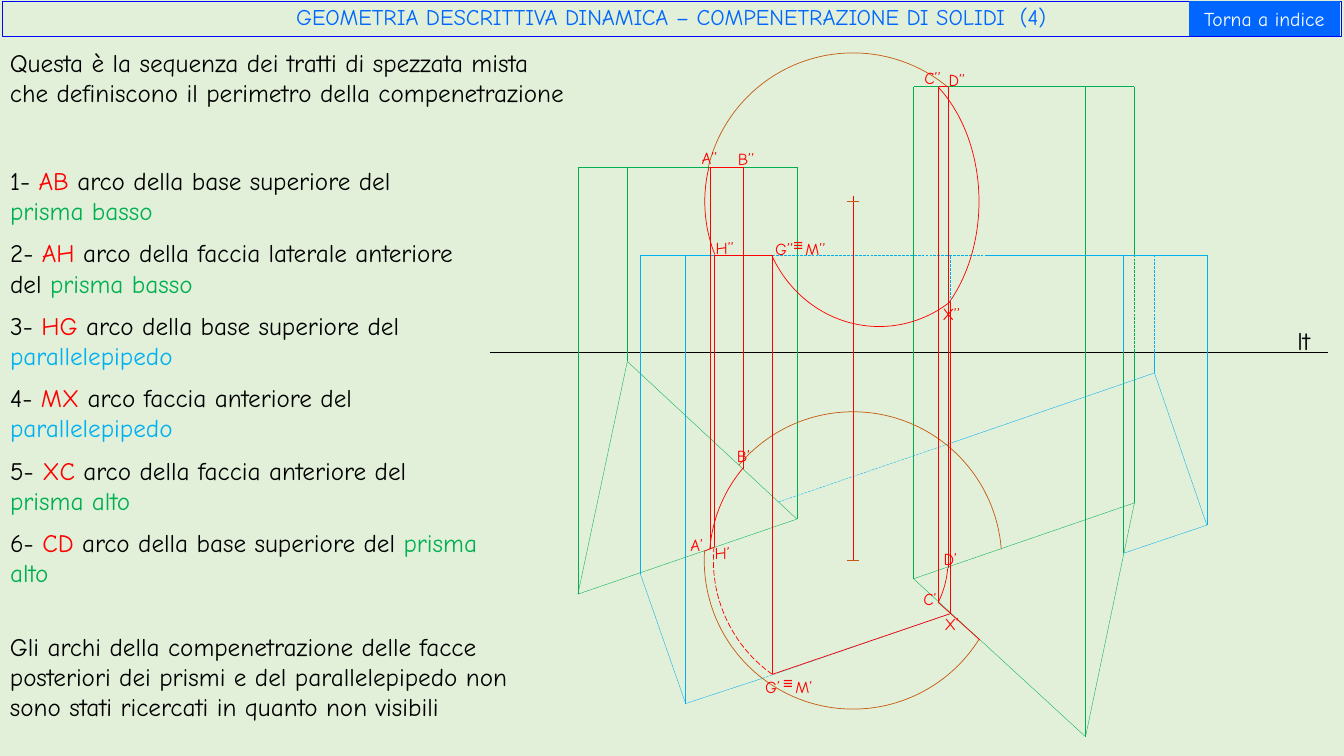
from math import atan2, cos, degrees, hypot, radians, sin

from pptx import Presentation
from pptx.dml.color import RGBColor
from pptx.enum.dml import MSO_LINE
from pptx.enum.shapes import MSO_CONNECTOR, MSO_SHAPE
from pptx.enum.text import MSO_ANCHOR, MSO_AUTO_SIZE, PP_ALIGN
from pptx.oxml.ns import qn
from pptx.util import Inches, Pt

STRAIGHT, LONG_DASH = MSO_CONNECTOR.STRAIGHT, MSO_LINE.LONG_DASH
ARC, TRIANGLE = MSO_SHAPE.ARC, MSO_SHAPE.ISOSCELES_TRIANGLE
BUTTON = MSO_SHAPE.ACTION_BUTTON_CUSTOM
TOP, MIDDLE = MSO_ANCHOR.TOP, MSO_ANCHOR.MIDDLE
LEFT, CENTER = PP_ALIGN.LEFT, PP_ALIGN.CENTER
NO_FIT = MSO_AUTO_SIZE.NONE

COLORS = {
    "background": "E2F0D9", "black": "000000", "white": "FFFFFF",
    "frame": "0000FF", "title": "0066FF", "red": "FF0000",
    "green": "00B050", "blue": "00B0F0", "orange": "C55A11",
}
FONT = "Comic Neue"

TITLE = "GEOMETRIA DESCRITTIVA DINAMICA – COMPENETRAZIONE DI SOLIDI  (4)"
BACK_TO_INDEX = "Torna a indice"
INTRO = ("Questa è la sequenza dei tratti di spezzata mista che definiscono "
         "il perimetro della compenetrazione")
CLOSING = ("Gli archi della compenetrazione delle facce posteriori dei prismi e "
           "del parallelepipedo non sono stati ricercati in quanto non visibili")
# edge, description, solid, colour of the solid
STEPS = [
    ("AB", "arco della base superiore del\v", "prisma basso", "green"),
    ("AH", "arco della faccia laterale anteriore del ", "prisma basso", "green"),
    ("HG", "arco della base superiore del ", "parallelepipedo", "blue"),
    ("MX", "arco faccia anteriore del ", "parallelepipedo", "blue"),
    ("XC", "arco della faccia anteriore del ", "prisma alto", "green"),
    ("CD", "arco della base superiore del ", "prisma alto", "green"),
]

# The plan lies below the ground line, the elevation above it.
GROUND = 3.49
LOW_TOP, TALL_TOP, BLOCK_TOP = 1.66, 0.86, 2.53
# Triangular bases in plan: box before rotation, rotation
LOW_BASE = (5.76, 3.96, 2.36, 1.97), 102
TALL_BASE = (8.85, 4.95, 2.37, 1.99), 281.8
BLOCK = {"west": (6.35, 5.69), "south": (6.8, 6.98),
         "east": (11.97, 5.21), "north": (11.45, 3.7)}
BLOCK_MEETS_TALL = (11.14, 5.49)

SPHERE_X, SPHERE_PLAN_Y, SPHERE_ELEVATION_Y = 8.46, 5.56, 2.0
SPHERE_RADIUS, CENTER_MARK = 1.475, 0.06
SPHERE_MEETS_LOW = (6.98, 5.47)
SPHERE_MEETS_TALL_FRONT, SPHERE_MEETS_TALL_BACK = (9.72, 6.35), (9.93, 5.45)

# Points of the section: x, y in plan, y in elevation
SECTION = {
    "A": (7.04, 5.45, LOW_TOP), "B": (7.37, 4.65, LOW_TOP),
    "C": (9.31, 5.98, TALL_TOP), "D": (9.4, 5.64, TALL_TOP),
    "H": (7.08, 5.43, BLOCK_TOP), "G": (7.66, 6.69, BLOCK_TOP),
    "X": (9.42, 6.09, 3.0),
}
PLAN = {name: (x, y) for name, (x, y, _) in SECTION.items()}
ELEVATION = {name: (x, y) for name, (x, _, y) in SECTION.items()}
# Shift of each label from its point, in plan and in elevation
LABEL_SHIFTS = {
    "A": ((-0.29, -0.19), (-0.18, -0.24)), "B": ((-0.16, -0.28), (-0.15, -0.23)),
    "C": ((-0.25, -0.19), (-0.24, -0.24)), "D": ((-0.14, -0.25), (-0.09, -0.22)),
    "H": ((-0.09, -0.09), (-0.08, -0.22)), "G": ((-0.17, -0.03), (-0.07, -0.21)),
    "X": ((-0.15, -0.05), (-0.17, -0.04)),
}
# Ellipses of the section in elevation: clockwise ends, centre x, radii
ELLIPSES = [("XG", 8.72, (1.18, 1.24)), ("CX", 8.64, (1.07, 1.45)),
            ("HA", 8.28, (1.29, 1.36))]


def rgb(name):
    return RGBColor.from_string(COLORS[name])


def inches(values):
    return [Inches(v) for v in values]


def set_line(line, color, width, dashed=False):
    line.color.rgb = rgb(color)
    line.width = Pt(width)
    if dashed:
        line.dash_style = LONG_DASH


def write(p, runs, size, align=LEFT, font=FONT):
    """Fill a paragraph with (text, colour) runs; \\v breaks the line."""
    p.alignment = align
    for text, color in runs:
        for i, part in enumerate(text.split("\v")):
            if i:
                p.add_line_break()
            if part:
                r = p.add_run()
                r.text = part
                for name, value in {"name": font, "size": Pt(size), "bold": False}.items():
                    setattr(r.font, name, value)
                r.font.color.rgb = rgb(color)


def set_frame(sp, anchor, box):
    for name, value in zip(("left", "top", "width", "height"), inches(box)):
        setattr(sp, name, value)
    tf = sp.text_frame
    for name, value in {"word_wrap": True, "auto_size": NO_FIT,
                        "vertical_anchor": anchor}.items():
        setattr(tf, name, value)
    return tf


def add_text(shapes, text, box, size=18, color="black", font=FONT):
    tf = set_frame(shapes.add_textbox(0, 0, 0, 0), TOP, box)
    write(tf.paragraphs[0], [(text, color)], size, font=font)


def add_line(shapes, color, start, end, dashed=False, width=0.25):
    line = shapes.add_connector(STRAIGHT, *inches((*start, *end)))
    set_line(line.line, color, width, dashed)
    spPr = line._element.spPr
    spPr.append(spPr.makeelement(qn("a:effectLst"), {}))


def add_edge(shapes, color, foot, top, hidden_to=None):
    """Draw a vertical edge up from its foot, dashed from BLOCK_TOP to hidden_to."""
    x, y = foot
    if hidden_to is None:
        add_line(shapes, color, foot, (x, top))
        return
    add_line(shapes, color, foot, (x, hidden_to))
    add_line(shapes, color, (x, hidden_to), (x, BLOCK_TOP), True)
    if top < BLOCK_TOP:
        add_line(shapes, color, (x, BLOCK_TOP), (x, top))


def add_outline(shapes, kind, box, color, width, dashed=False):
    sp = shapes.add_shape(kind, *inches(box))
    sp.shadow.inherit = False
    sp.fill.background()
    set_line(sp.line, color, width, dashed)
    return sp


def add_arc(shapes, color, center, start, end, radii=None, dashed=False):
    """Draw clockwise from start to end; without radii, a circle through start."""
    cx, cy = center
    rx, ry = radii or (hypot(start[0] - cx, start[1] - cy),) * 2
    arc = add_outline(shapes, ARC, (cx - rx, cy - ry, 2 * rx, 2 * ry), color, 0.5, dashed)
    for i, (x, y) in enumerate((start, end)):
        angle = degrees(atan2(y - cy, x - cx)) % 360
        arc.adjustments[i] = angle * 0.6  # 60000 units a degree, scaled by 100000


def triangle_corners(box, rotation):
    """Return apex, right and left corner after rotation."""
    left, top, width, height = box
    c, s = cos(radians(rotation)), sin(radians(rotation))
    corners = (0, -height / 2), (width / 2, height / 2), (-width / 2, height / 2)
    return [(left + width / 2 + x * c - y * s, top + height / 2 + x * s + y * c)
            for x, y in corners]


def add_prism(shapes, base, top, hidden_corner=None):
    box, rotation = base
    add_outline(shapes, TRIANGLE, box, "green", 0.25).rotation = rotation
    corners = triangle_corners(box, rotation)
    for i, corner in enumerate(corners):
        add_edge(shapes, "green", corner, top, GROUND if i == hidden_corner else None)
    xs = [x for x, _ in corners]
    add_line(shapes, "green", (min(xs), top), (max(xs), top))


def add_block(shapes):
    west, south, east, north = BLOCK.values()
    for name, corner in BLOCK.items():
        add_edge(shapes, "blue", corner, BLOCK_TOP, GROUND if name == "north" else None)
    add_edge(shapes, "blue", PLAN["X"], BLOCK_TOP, ELEVATION["X"][1])
    x = BLOCK_MEETS_TALL[0]
    add_line(shapes, "green", BLOCK_MEETS_TALL, (x, GROUND))
    add_line(shapes, "blue", (x, GROUND), (x, BLOCK_TOP))
    enters, leaves = (7.72, 4.98), (9.39, 4.41)  # back side under the sphere
    front = (7.56, 6.73)  # front side reaches the sphere
    top_shows = (9.78, BLOCK_TOP)  # top comes out of the sphere
    for start, end, dashed in [
            (west, south, False), (north, east, False), (BLOCK_MEETS_TALL, east, False),
            (south, front, False), (front, PLAN["X"], True),
            (enters, leaves, True), (leaves, north, False),
            ((west[0], BLOCK_TOP), ELEVATION["G"], False),
            (ELEVATION["G"], top_shows, True), (top_shows, (east[0], BLOCK_TOP), False)]:
        add_line(shapes, "blue", start, end, dashed)


def add_sphere_and_section(shapes):
    plan_center = SPHERE_X, SPHERE_PLAN_Y
    elevation_center = SPHERE_X, SPHERE_ELEVATION_Y
    add_line(shapes, "red", plan_center, (SPHERE_X, SPHERE_ELEVATION_Y - CENTER_MARK))
    for x, y in (plan_center, elevation_center):
        add_line(shapes, "orange", (x - CENTER_MARK, y), (x + CENTER_MARK, y))
    radii = SPHERE_RADIUS, SPHERE_RADIUS
    for center, start, end in [
            (elevation_center, ELEVATION["A"], ELEVATION["D"]),
            (plan_center, PLAN["B"], SPHERE_MEETS_TALL_BACK),
            (plan_center, SPHERE_MEETS_TALL_FRONT, SPHERE_MEETS_LOW)]:
        add_arc(shapes, "orange", center, start, end, radii)

    for name in SECTION:
        add_line(shapes, "red", PLAN[name], ELEVATION[name])
    for start, end in ("AB", "DC", "GH"):
        add_arc(shapes, "red", plan_center, PLAN[start], PLAN[end], dashed=start == "G")
        add_line(shapes, "red", ELEVATION[start], ELEVATION[end], width=0.5)
    for (start, end), x, radii in ELLIPSES:
        add_arc(shapes, "red", (x, SPHERE_ELEVATION_Y), ELEVATION[start], ELEVATION[end], radii)
    for start, end in [("H", SPHERE_MEETS_LOW), ("G", PLAN["X"]), ("C", SPHERE_MEETS_TALL_FRONT)]:
        add_line(shapes, "red", PLAN[start], end, width=0.5)


def add_labels(shapes):
    for name, shifts in LABEL_SHIFTS.items():
        for view, mark, (dx, dy) in zip((PLAN, ELEVATION), ("’", "’’"), shifts):
            x, y = view[name][0] + dx, view[name][1] + dy
            labels = [(name + mark, x, y, FONT)]
            if name == "G":  # M coincides with G
                labels += [("≡", x + 0.18, y - 0.04, "Arial"), ("M" + mark, x + 0.3, y, FONT)]
            for text, left, top, font in labels:
                add_text(shapes, text, (left, top, 0.6, 0.3), 12, "red", font)


def add_header(shapes):
    tf = set_frame(shapes.title, MIDDLE, (0.02, 0.01, 13.28, 0.35))
    set_line(shapes.title.line, "frame", 0.25)
    tf.paragraphs[0].line_spacing = 0.9
    write(tf.paragraphs[0], [(TITLE, "title")], 16, CENTER)
    sp = shapes.add_shape(BUTTON, 0, 0, 0, 0)
    sp.shadow.inherit = False
    sp.fill.solid()
    sp.fill.fore_color.rgb = rgb("title")
    sp.line.fill.background()
    tf = set_frame(sp, MIDDLE, (11.79, 0.01, 1.5, 0.35))
    write(tf.paragraphs[0], [(BACK_TO_INDEX, "white")], 14, CENTER)


def add_steps(body):
    tf = set_frame(body, TOP, (0, 1.59, 4.86, 4.4))
    for i, (edge, description, solid, color) in enumerate(STEPS):
        p = tf.add_paragraph() if i else tf.paragraphs[0]
        p.space_before, p.space_after = Pt(0), Pt(8.5)
        pPr = p._p.get_or_add_pPr()
        for name in ("marL", "indent"):
            pPr.set(name, "0")
        pPr.append(pPr.makeelement(qn("a:buNone"), {}))
        write(p, [(f"{i + 1}- ", "black"), (edge, "red"),
                  (" " + description, "black"), (solid, color)], 18)


def main():
    prs = Presentation()
    prs.slide_width, prs.slide_height = inches((13.33, 7.5))
    slide = prs.slides.add_slide(prs.slide_layouts[1])
    slide.background.fill.solid()
    slide.background.fill.fore_color.rgb = rgb("background")
    shapes = slide.shapes
    add_header(shapes)
    add_text(shapes, INTRO, (0, 0.42, 5.79, 1.01))
    add_steps(slide.placeholders[1])
    add_text(shapes, CLOSING, (0, 6.21, 5.43, 1.01))
    add_line(shapes, "black", (4.86, GROUND), (13.17, GROUND))
    add_text(shapes, "lt", (12.77, 3.18, 0.5, 0.4))
    add_prism(shapes, LOW_BASE, LOW_TOP)
    add_prism(shapes, TALL_BASE, TALL_TOP, hidden_corner=1)
    add_block(shapes)
    add_sphere_and_section(shapes)
    add_labels(shapes)
    prs.save("out.pptx")


if __name__ == "__main__":
    main()
